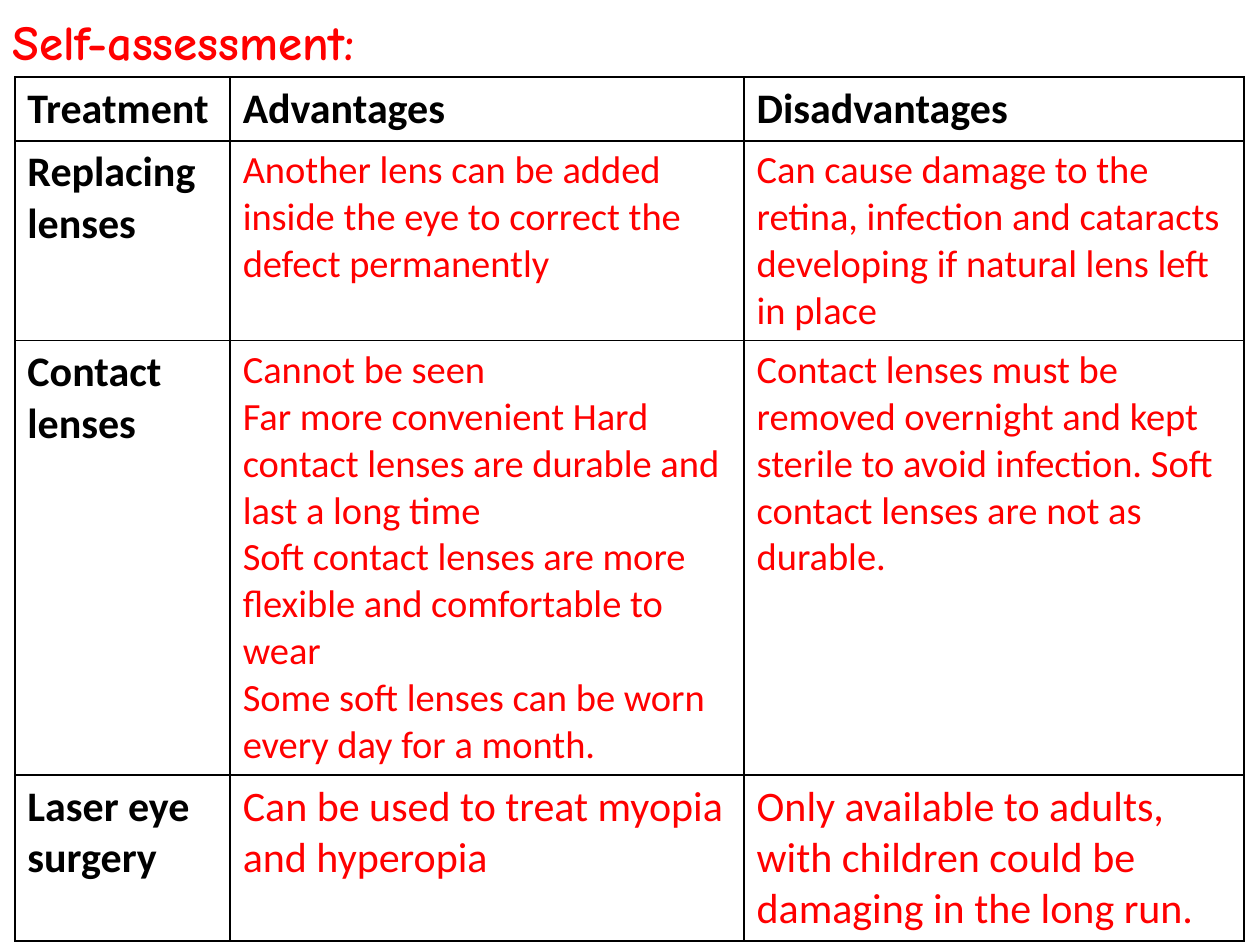
from lxml.etree import SubElement
from pptx import Presentation
from pptx.dml.color import RGBColor
from pptx.enum.text import MSO_ANCHOR, MSO_AUTO_SIZE, PP_ALIGN
from pptx.oxml.ns import qn
from pptx.util import Cm, Pt

COLORS = {"label": "000000", "answer": "FF0000", "border": "000000"}
TITLE = "Self-assessment:"
HEADERS = ["Treatment", "Advantages", "Disadvantages"]
TREATMENTS = [
    {
        "name": "Replacing lenses",
        "size": 22,
        "advantages": ["Another lens can be added inside the eye to correct the defect permanently"],
        "disadvantages": ["Can cause damage to the retina, infection and cataracts developing "
                          "if natural lens left in place"],
    },
    {
        "name": "Contact lenses",
        "size": 22,
        "advantages": [
            "Cannot be seen",
            "Far more convenient Hard contact lenses are durable and last a long time",
            "Soft contact lenses are more flexible and comfortable to wear",
            "Some soft lenses can be worn every day for a month.",
        ],
        "disadvantages": ["Contact lenses must be removed overnight and kept sterile to avoid "
                          "infection. Soft contact lenses are not as durable."],
    },
    {
        "name": "Laser eye surgery",
        "size": 24,
        "advantages": ["Can be used to treat myopia and hyperopia"],
        "disadvantages": ["Only available to adults, with children could be damaging in the long run."],
    },
]
COL_WIDTHS = [4.34, 10.36, 10.08]
ROW_HEIGHTS = [1.27, 4.03, 8.74, 3.35]


def write(tf, lines, size, color, bold, font="Calibri"):
    """Write each line as one left-aligned paragraph."""
    for i, line in enumerate(lines):
        p = tf.add_paragraph() if i else tf.paragraphs[0]
        p.alignment = PP_ALIGN.LEFT
        r = p.add_run()
        r.text = line
        r.font.name = font
        r.font.size = Pt(size)
        r.font.bold = bold
        r.font.color.rgb = RGBColor.from_string(COLORS[color])


def add_borders(cell):
    """Draw a thin line on all four sides of a cell."""
    tcPr = cell._tc.get_or_add_tcPr()
    for side in ("a:lnL", "a:lnR", "a:lnT", "a:lnB"):
        ln = SubElement(tcPr, qn(side), w=str(Pt(1)))
        fill = SubElement(ln, qn("a:solidFill"))
        SubElement(fill, qn("a:srgbClr"), val=COLORS["border"])


def add_title(s):
    """Place the title above the table."""
    title = s.shapes.title
    title.left, title.top, title.width, title.height = Cm(0), Cm(0.1), Cm(9.02), Cm(1.45)
    tf = title.text_frame
    tf.word_wrap = True
    tf.auto_size = MSO_AUTO_SIZE.NONE
    tf.vertical_anchor = MSO_ANCHOR.TOP
    write(tf, [TITLE], 28, "answer", True, "Comic Neue")


def add_treatments(s):
    """Build the table of treatments."""
    rows = [[([h], 24, "label", True) for h in HEADERS]]
    for t in TREATMENTS:
        rows.append([
            ([t["name"]], 24, "label", True),
            (t["advantages"], t["size"], "answer", False),
            (t["disadvantages"], t["size"], "answer", False),
        ])
    table = s.shapes.add_table(
        len(rows), len(HEADERS), Cm(0.3), Cm(1.55),
        Cm(sum(COL_WIDTHS)), Cm(sum(ROW_HEIGHTS))).table
    table.first_row = table.horz_banding = False
    for col, width in zip(table.columns, COL_WIDTHS):
        col.width = Cm(width)
    for row, height, contents in zip(table.rows, ROW_HEIGHTS, rows):
        row.height = Cm(height)
        for cell, content in zip(row.cells, contents):
            add_borders(cell)
            cell.fill.background()
            write(cell.text_frame, *content)


def main():
    """Build and save the slide."""
    prs = Presentation()
    prs.slide_width, prs.slide_height = Cm(25.4), Cm(19.05)
    s = prs.slides.add_slide(prs.slide_layouts[5])
    add_title(s)
    add_treatments(s)
    prs.save("out.pptx")


if __name__ == "__main__":
    main()
